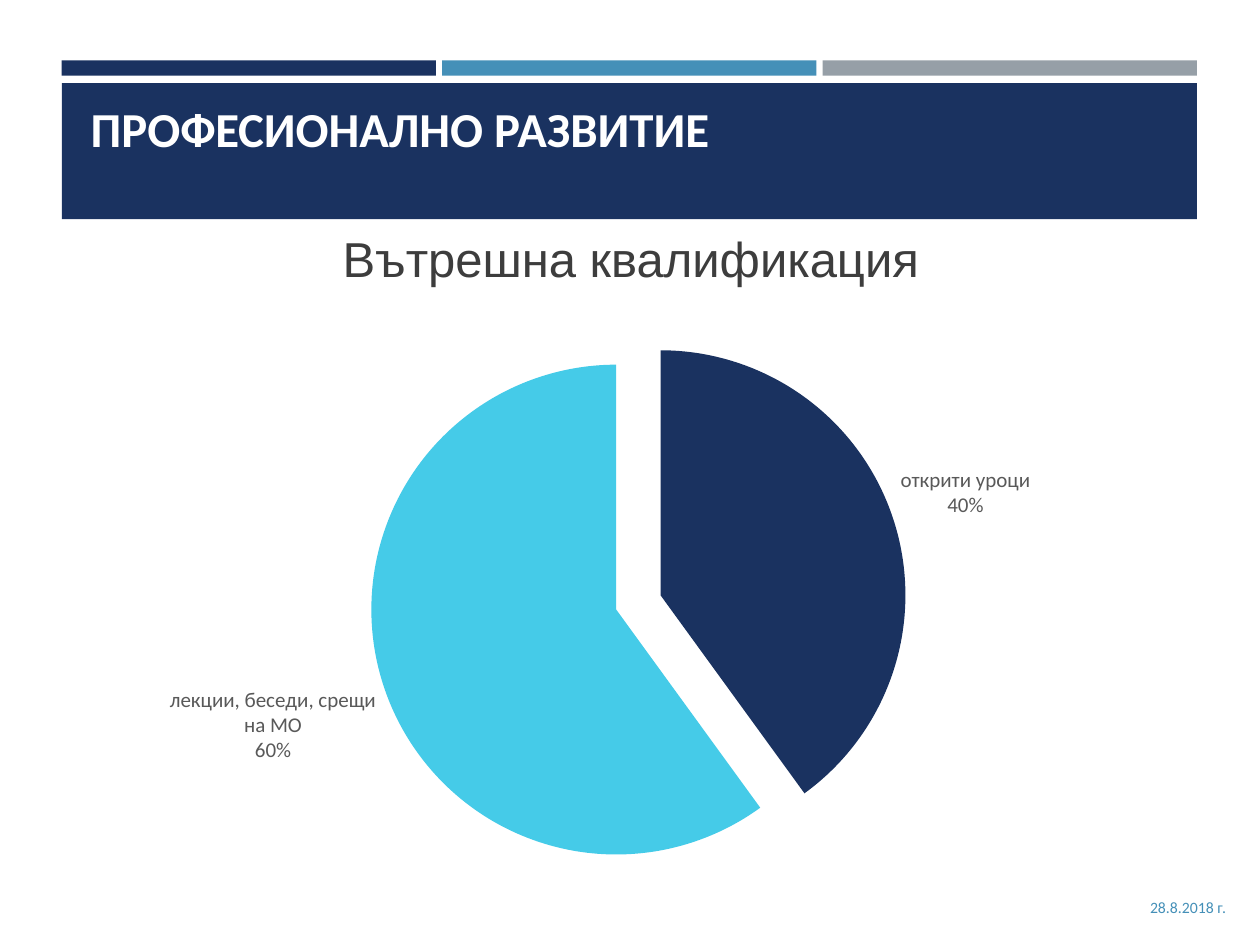
from lxml import etree
from pptx import Presentation
from pptx.chart.data import CategoryChartData
from pptx.dml.color import RGBColor
from pptx.enum.chart import XL_CHART_TYPE, XL_LABEL_POSITION
from pptx.enum.shapes import MSO_SHAPE
from pptx.enum.text import MSO_ANCHOR, MSO_AUTO_SIZE, PP_ALIGN
from pptx.oxml import parse_xml
from pptx.util import Inches, Pt

PIE = XL_CHART_TYPE.PIE
OUTSIDE_END = XL_LABEL_POSITION.OUTSIDE_END
RECTANGLE = MSO_SHAPE.RECTANGLE
TOP, MIDDLE, BOTTOM = MSO_ANCHOR.TOP, MSO_ANCHOR.MIDDLE, MSO_ANCHOR.BOTTOM
LEFT, CENTER, RIGHT = PP_ALIGN.LEFT, PP_ALIGN.CENTER, PP_ALIGN.RIGHT
NAVY, BLUE, GRAY, CYAN = "1A3260", "4590B8", "969FA7", "45CBE8"
CHART_NS = "http://schemas.openxmlformats.org/drawingml/2006/chart"


def color(hex_value):
    return RGBColor.from_string(hex_value)


def write(shape, text, box, size, text_color, font="Calibri", bold=False,
          align=LEFT, anchor=TOP):
    shape.left, shape.top, shape.width, shape.height = map(Inches, box)
    frame = shape.text_frame
    frame.text = text
    frame.word_wrap = True
    frame.auto_size = MSO_AUTO_SIZE.NONE
    frame.vertical_anchor = anchor
    paragraph = frame.paragraphs[0]
    paragraph.alignment = align
    run_font = paragraph.runs[0].font
    run_font.name, run_font.size, run_font.bold = font, Pt(size), bold
    run_font.color.rgb = color(text_color)
    return paragraph


prs = Presentation()
prs.slide_width, prs.slide_height = Inches(10), Inches(7.5)
slide = prs.slides.add_slide(prs.slide_layouts[1])
title, subtitle = slide.placeholders

# Header: three thin strips above a wide band
strip_width, strip_step = 2.97, 3.02
bars = [(0.49 + i * strip_step, 0.48, strip_width, 0.12, fill)
        for i, fill in enumerate((NAVY, BLUE, GRAY))]
bars.append((0.49, 0.66, 9.01, 1.08, NAVY))
for *box, fill in bars:
    bar = slide.shapes.add_shape(RECTANGLE, *map(Inches, box))
    bar.shadow.inherit = False
    bar.fill.solid()
    bar.fill.fore_color.rgb = color(fill)
    bar.line.fill.background()
    title.element.addprevious(bar.element)  # keeps the header behind the title

write(title, "ПРОФЕСИОНАЛНО РАЗВИТИЕ", (0.62, 0.77, 8.74, 0.99), 27.9, "FFFFFF",
      bold=True, anchor=BOTTOM)
title.text_frame.margin_bottom = Inches(0.51)

heading = write(subtitle, "Вътрешна квалификация", (0.44, 1.76, 9.13, 0.66), 28,
                "3D3D3D", font="Arial", align=CENTER)
heading.space_before, heading.space_after = Pt(5.6), Pt(6)
heading_format = heading._p.get_or_add_pPr()
heading_format.set("marL", "0")
heading_format.set("indent", "0")
etree.SubElement(
    heading_format, "{http://schemas.openxmlformats.org/drawingml/2006/main}buNone")

date = slide.shapes.add_textbox(0, 0, 0, 0)
write(date, "28.8.2018 г.", (7.5, 7, 2.33, 0.4), 9, BLUE, align=RIGHT, anchor=MIDDLE)

# Pie of the two kinds of internal training
training = CategoryChartData()
training.categories = ["открити уроци", "лекции, беседи, срещи на МО"]
training.add_series("Series 1", (40, 60))
chart = slide.shapes.add_chart(
    PIE, Inches(0.54), Inches(2.29), Inches(8.64), Inches(4.88), training).chart
chart.has_title = False
chart.has_legend = False
chart.font.name, chart.font.size = "Calibri", Pt(10)

plot = chart.plots[0]
plot.vary_by_categories = True
series = plot.series[0]
for i, fill in enumerate((NAVY, CYAN)):
    slice_fill = series.points[i].format.fill
    slice_fill.solid()
    slice_fill.fore_color.rgb = color(fill)
for point, offset in zip(series._element.findall(f"{{{CHART_NS}}}dPt"), (9, 10)):
    point.find(f"{{{CHART_NS}}}spPr").addprevious(
        parse_xml(f'<c:explosion xmlns:c="{CHART_NS}" val="{offset}"/>'))

labels = series.data_labels
labels.show_category_name = labels.show_percentage = True
labels.show_value = False
labels.position = OUTSIDE_END
labels.font.name, labels.font.size = "Calibri", Pt(12)
labels.font.color.rgb = color("595959")
labels._element.find(f"{{{CHART_NS}}}showBubbleSize").addnext(
    parse_xml(f'<c:separator xmlns:c="{CHART_NS}">\n</c:separator>'))

plot_area = chart._chartSpace.chart.plotArea
for old_layout in plot_area.findall(f"{{{CHART_NS}}}layout"):
    plot_area.remove(old_layout)
plot_area.insert(0, parse_xml(
    f'<c:layout xmlns:c="{CHART_NS}"><c:manualLayout><c:layoutTarget val="inner"/>'
    '<c:xMode val="edge"/><c:yMode val="edge"/><c:x val="0.3"/><c:y val="0.11"/>'
    '<c:w val="0.45"/><c:h val="0.8"/></c:manualLayout></c:layout>'))

prs.save("out.pptx")
